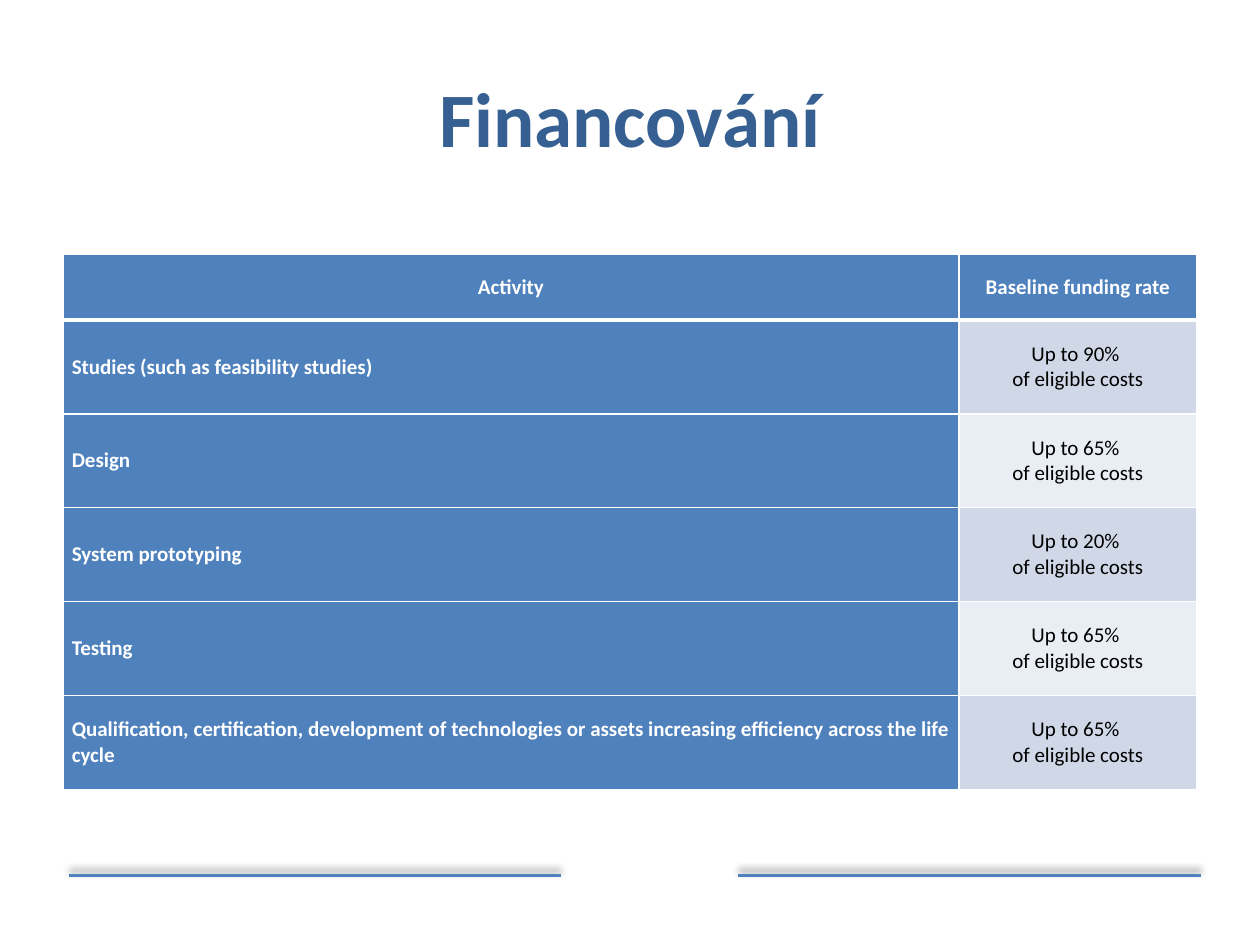
from dataclasses import dataclass

from lxml.etree import SubElement
from pptx import Presentation
from pptx.dml.color import RGBColor as RGB
from pptx.enum.shapes import MSO_CONNECTOR as CONNECTOR
from pptx.enum.text import MSO_ANCHOR as ANCHOR, PP_ALIGN as ALIGN
from pptx.oxml.ns import qn
from pptx.util import Inches, Pt


@dataclass(frozen=True)
class Theme:
    font: str = "Calibri"
    accent: str = "4F81BD"
    title: str = "376092"
    light: str = "FFFFFF"
    dark: str = "000000"
    bands: tuple = ("D0D8E8", "E9EDF4")
    title_size: int = 44
    body_size: int = 12


ACTIVITIES = [
    ("Studies (such as feasibility studies)", 90),
    ("Design", 65),
    ("System prototyping", 20),
    ("Testing", 65),
    ("Qualification, certification, development of technologies or assets "
     "increasing efficiency across the life cycle", 65),
]


def write(tf, text, *, font, size, color, bold=False, align=ALIGN.CENTER):
    """Fill a text frame, one paragraph per line of text."""
    tf.word_wrap = True
    for i, line in enumerate(text.split("\n")):
        p = tf.add_paragraph() if i else tf.paragraphs[0]
        p.alignment = align
        r = p.add_run()
        r.text = line
        r.font.name, r.font.size, r.font.bold = font, Pt(size), bold
        r.font.color.rgb = RGB.from_string(color)


def add_color(parent, color):
    return SubElement(parent, qn("a:srgbClr"), val=color)


class Deck:
    """Slide with lengths in columns and rows of a 20 by 15 grid."""
    COLS, ROWS = 20, 15

    def __init__(self, theme):
        self.theme = theme
        self.prs = Presentation()
        self.prs.slide_width, self.prs.slide_height = Inches(10), Inches(7.5)
        self.s = self.prs.slides.add_slide(self.prs.slide_layouts[6])

    def x(self, cols):
        return round(self.prs.slide_width * cols / self.COLS)

    def y(self, rows):
        return round(self.prs.slide_height * rows / self.ROWS)

    def rule(self, start, end, row):
        """Horizontal line whose soft shadow falls upwards."""
        line = self.s.shapes.add_connector(
            CONNECTOR.STRAIGHT, self.x(start), self.y(row), self.x(end), self.y(row))
        line.line.width = Pt(2)
        line.line.color.rgb = RGB.from_string(self.theme.accent)
        effects = SubElement(line._element.spPr, qn("a:effectLst"))
        shadow = SubElement(effects, qn("a:outerShdw"), blurRad=str(Pt(4)),
                            dist=str(Pt(3)), dir="16200000", rotWithShape="0")
        SubElement(add_color(shadow, self.theme.dark), qn("a:alpha"), val="40000")

    def title(self, text, left, top, width, height):
        t = self.theme
        tf = self.s.shapes.add_textbox(
            self.x(left), self.y(top), self.x(width), self.y(height)).text_frame
        tf.vertical_anchor = ANCHOR.MIDDLE
        write(tf, text, font=t.font, size=t.title_size, color=t.title, bold=True)

    def table(self, left, top, cols, rows):
        table = self.s.shapes.add_table(
            len(rows), len(cols), self.x(left), self.y(top),
            self.x(sum(cols)), self.y(sum(rows))).table
        for column, width in zip(table.columns, cols):
            column.width = self.x(width)
        for row, height in zip(table.rows, rows):
            row.height = self.y(height)
        return table

    def cell(self, cell, text, fill, *, bottom=1, top=1, **style):
        t = self.theme
        cell.vertical_anchor = ANCHOR.MIDDLE
        cell.margin_left = cell.margin_right = Inches(0.07)
        cell.margin_top = cell.margin_bottom = 0
        write(cell.text_frame, text, font=t.font, size=t.body_size, **style)
        tc_pr = cell._tc.get_or_add_tcPr()
        for side, width in (("L", 1), ("R", 1), ("T", top), ("B", bottom)):
            border = SubElement(tc_pr, qn(f"a:ln{side}"), w=str(Pt(width)))
            add_color(SubElement(border, qn("a:solidFill")), t.light)
        cell.fill.solid()
        cell.fill.fore_color.rgb = RGB.from_string(fill)

    def funding_table(self, activities):
        t = self.theme
        table = self.table(1, 4.04, cols=(14.22, 3.78),
                           rows=[1.04] + [1.49] * len(activities))
        strong = dict(fill=t.accent, color=t.light, bold=True)
        for col, heading in enumerate(("Activity", "Baseline funding rate")):
            self.cell(table.cell(0, col), heading, bottom=3, **strong)
        for row, (activity, rate) in enumerate(activities, 1):
            top = 3 if row == 1 else 1
            self.cell(table.cell(row, 0), activity, top=top,
                      align=ALIGN.JUSTIFY, **strong)
            self.cell(table.cell(row, 1), f"Up to {rate}% \nof eligible costs",
                      t.bands[(row - 1) % 2], top=top, color=t.dark)


def main():
    deck = Deck(Theme())
    for start, end in ((1.1, 8.9), (11.72, 19.06)):
        deck.rule(start, end, 13.9)
    deck.title("Financování", 1, 0.6, 18, 2.5)
    deck.funding_table(ACTIVITIES)
    deck.prs.save("out.pptx")


if __name__ == "__main__":
    main()
